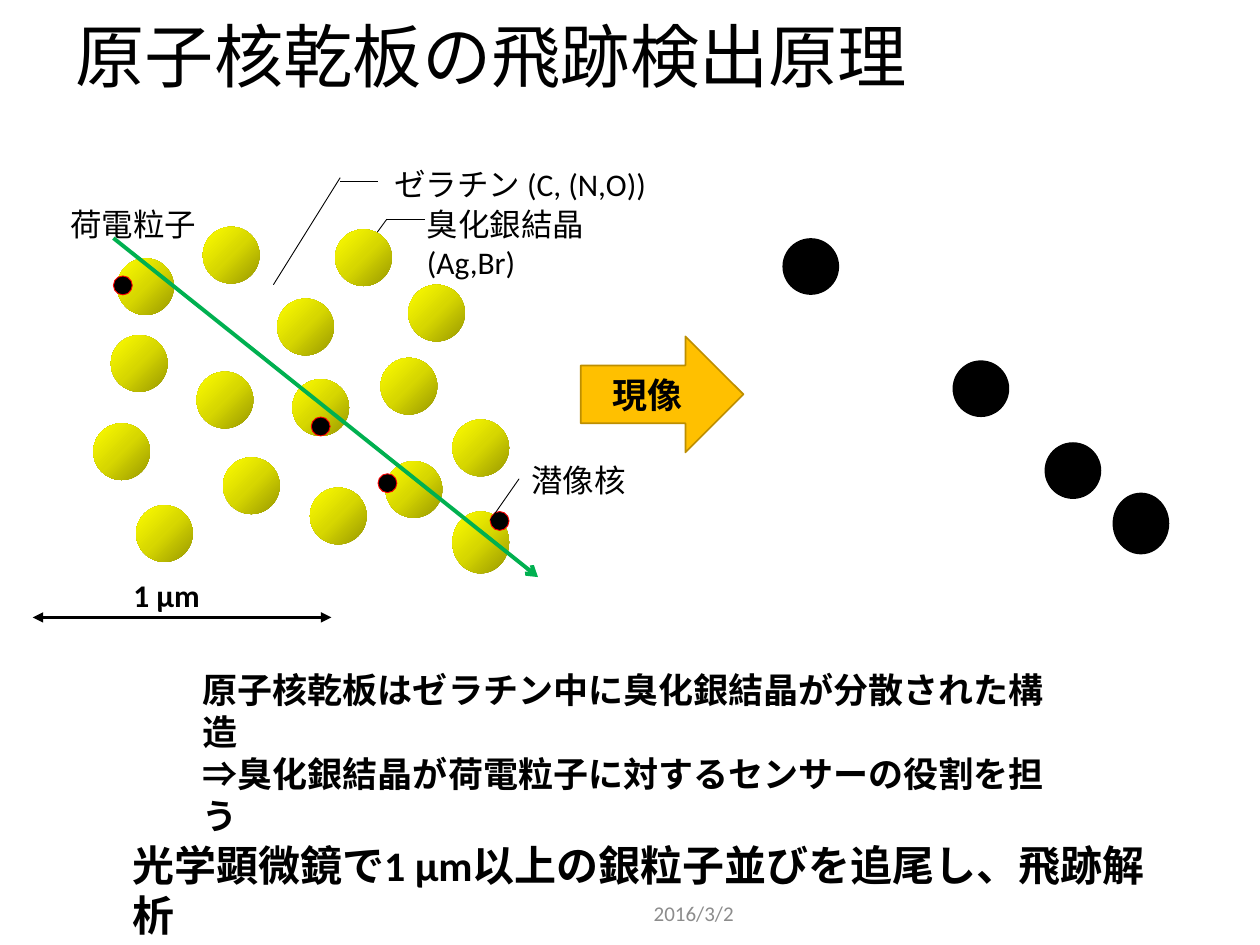
from copy import deepcopy

from pptx import Presentation
from pptx.dml.color import RGBColor
from pptx.enum.shapes import MSO_CONNECTOR, MSO_SHAPE
from pptx.enum.text import MSO_ANCHOR, MSO_AUTO_SIZE, PP_ALIGN
from pptx.oxml.ns import qn
from pptx.util import Inches, Pt
from lxml import etree

STRAIGHT = MSO_CONNECTOR.STRAIGHT
OVAL, RIGHT_ARROW = MSO_SHAPE.OVAL, MSO_SHAPE.RIGHT_ARROW
MIDDLE, NO_FIT = MSO_ANCHOR.MIDDLE, MSO_AUTO_SIZE.NONE
LEFT, CENTER = PP_ALIGN.LEFT, PP_ALIGN.CENTER

BLACK = RGBColor(0x00, 0x00, 0x00)
GRAY = RGBColor(0x8C, 0x8C, 0x8C)
RED = RGBColor(0xFF, 0x00, 0x00)
GREEN = RGBColor(0x00, 0xB0, 0x50)
AMBER = RGBColor(0xFF, 0xC0, 0x00)
DARK_AMBER = RGBColor(0xBD, 0x8E, 0x00)
OLIVE = RGBColor(0x97, 0x97, 0x00)
MID_YELLOW = RGBColor(0xD7, 0xD7, 0x00)
YELLOW = RGBColor(0xFF, 0xFF, 0x00)

FONT = "Calibri"
GRAIN = 0.45
TALL_GRAIN = 0.49
NUCLEUS = 0.15

# Grains the particle passes through: left, top, height
HIT_CRYSTALS = [(0.93, 2.05, GRAIN), (0.88, 2.66, GRAIN), (2.32, 3.01, GRAIN),
                (3.06, 3.66, GRAIN), (3.59, 4.06, TALL_GRAIN)]
OTHER_CRYSTALS = [(0.74, 3.36), (1.56, 2.95), (1.77, 3.63), (2.46, 3.87),
                  (2.2, 2.37), (2.66, 1.82), (3.24, 2.26), (3.02, 2.84),
                  (3.59, 3.33), (1.61, 1.8), (1.08, 4.01)]
NUCLEI = [(0.9, 2.19), (2.47, 3.31), (3, 3.76), (3.89, 4.06)]
SILVER_GRAINS = [(6.21, 1.89, GRAIN), (7.56, 2.86, GRAIN),
                 (8.29, 3.51, GRAIN), (8.83, 3.91, TALL_GRAIN)]
LABEL_LEADERS = [((2.77, 2.15), (3.07, 1.74)), ((3.07, 1.74), (3.37, 1.74)),
                 ((2.17, 2.26), (2.7, 1.41)), ((2.7, 1.44), (3, 1.44))]


class SlideBuilder:
    def __init__(self, s):
        self.s = s

    def add_lines(self, tf, lines, size, color=BLACK, bold=False, align=LEFT):
        for i, line in enumerate(lines):
            p = tf.add_paragraph() if i else tf.paragraphs[0]
            p.alignment = align
            r = p.add_run()
            r.text = line
            r.font.name = FONT
            r.font.size = Pt(size)
            r.font.bold = bold
            r.font.color.rgb = color

    def title(self, text, left, top, width, height):
        sp = self.s.shapes.title
        sp.left, sp.top = Inches(left), Inches(top)
        sp.width, sp.height = Inches(width), Inches(height)
        tf = sp.text_frame
        tf.auto_size = NO_FIT
        tf.vertical_anchor = MIDDLE
        self.add_lines(tf, [text], 39.6)
        tf.paragraphs[0].line_spacing = 0.9

    def text(self, lines, left, top, width, height, size=18, **style):
        sp = self.s.shapes.add_textbox(Inches(left), Inches(top),
                                       Inches(width), Inches(height))
        tf = sp.text_frame
        tf.word_wrap = True
        self.add_lines(tf, lines, size, **style)
        return tf

    def shape(self, kind, left, top, width, height, fill=None, line=None, weight=0.5):
        sp = self.s.shapes.add_shape(kind, Inches(left), Inches(top),
                                     Inches(width), Inches(height))
        sp.shadow.inherit = False
        if fill is not None:
            sp.fill.solid()
            sp.fill.fore_color.rgb = fill
        if line is None:
            sp.line.fill.background()
        else:
            sp.line.color.rgb = line
            sp.line.width = Pt(weight)
        return sp

    def crystal(self, left, top, height=GRAIN):
        """Add a yellow grain lit from the upper left."""
        sp = self.shape(OVAL, left, top, GRAIN, height)
        sp.fill.gradient()
        sp.fill.gradient_angle = 135
        stops = sp.element.spPr.find(qn("a:gradFill")).find(qn("a:gsLst"))
        stops.insert(1, deepcopy(stops[0]))
        shades = [(0, OLIVE), (0.5, MID_YELLOW), (1, YELLOW)]
        for stop, (position, color) in zip(sp.fill.gradient_stops, shades):
            stop.position = position
            stop.color.rgb = color

    def line(self, start, end, color=BLACK, weight=0.5, head=None, tail=None):
        x1, y1, x2, y2 = (Inches(v) for v in (*start, *end))
        c = self.s.shapes.add_connector(STRAIGHT, x1, y1, x2, y2)
        c.line.color.rgb = color
        c.line.width = Pt(weight)
        spPr = c.element.spPr
        ln = spPr.find(qn("a:ln"))
        for tag, arrow in (("a:headEnd", head), ("a:tailEnd", tail)):
            if arrow:
                etree.SubElement(ln, qn(tag), type=arrow)
        etree.SubElement(spPr, qn("a:effectLst"))


def main():
    prs = Presentation()
    prs.slide_width, prs.slide_height = Inches(10), Inches(7.5)
    b = SlideBuilder(prs.slides.add_slide(prs.slide_layouts[5]))

    date = b.text(["2016/3/2"], 5.09, 7.05, 2.33, 0.4, size=12, color=GRAY)
    date.vertical_anchor = MIDDLE
    b.title("原子核乾板の飛跡検出原理", 0.5, 0.13, 9, 0.69)

    # Emulsion before development
    b.text(["荷電粒子"], 0.46, 1.58, 2.46, 0.38)
    b.text(["臭化銀結晶", "(Ag,Br)"], 3.29, 1.58, 2.47, 0.67)
    b.text(["ゼラチン (C, (N,O))"], 3.03, 1.26, 3.1, 0.38)
    for start, end in LABEL_LEADERS:
        b.line(start, end)
    for left, top, height in HIT_CRYSTALS:
        b.crystal(left, top, height)
    b.line((0.9, 1.89), (4.27, 4.58), GREEN, 2.25, tail="arrow")
    for left, top in NUCLEI:
        b.shape(OVAL, left, top, NUCLEUS, NUCLEUS, BLACK, RED)
    b.line((3.89, 4.13), (4.12, 3.8))
    b.text(["潜像核"], 4.12, 3.61, 1.87, 0.38)
    for left, top in OTHER_CRYSTALS:
        b.crystal(left, top)

    # Silver grains after development
    for left, top, height in SILVER_GRAINS:
        b.shape(OVAL, left, top, GRAIN, height, BLACK)

    b.text(["原子核乾板はゼラチン中に臭化銀結晶が分散された構造",
            "⇒臭化銀結晶が荷電粒子に対するセンサーの役割を担う"],
           1.51, 5.26, 6.99, 0.77, size=20, bold=True)
    b.line((0.26, 4.9), (2.63, 4.9), weight=1.5, head="triangle", tail="triangle")
    b.text(["1 μm"], 0.96, 4.52, 0.97, 0.4, bold=True)
    b.text(["光学顕微鏡で1 μm以上の銀粒子並びを追尾し、飛跡解析"],
           0.95, 6.61, 8.33, 0.5, size=24, bold=True)

    arrow = b.shape(RIGHT_ARROW, 4.61, 2.67, 1.29, 0.92, AMBER, DARK_AMBER, 1)
    arrow.text_frame.vertical_anchor = MIDDLE
    b.add_lines(arrow.text_frame, ["現像"], 20, bold=True, align=CENTER)

    prs.save("out.pptx")


if __name__ == "__main__":
    main()
